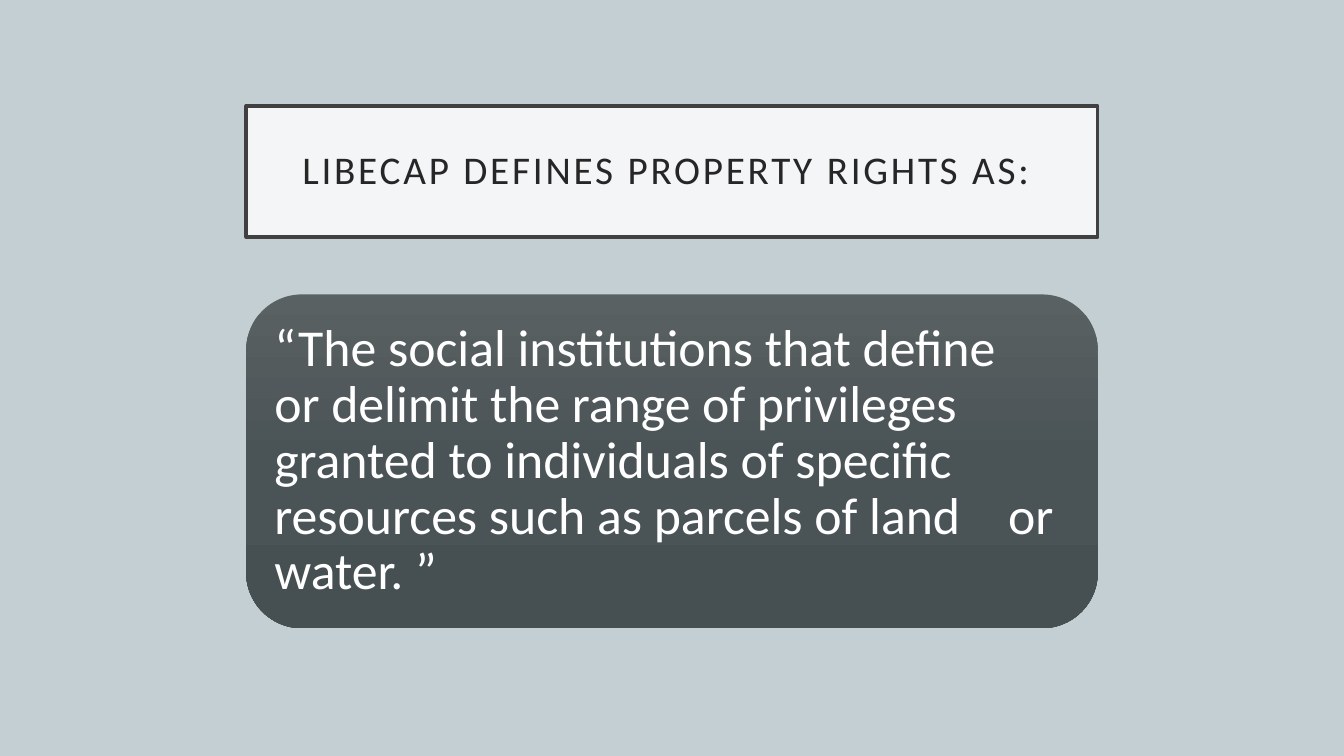
"""Build the slide that quotes Libecap's definition of property rights."""
from lxml import etree
from pptx import Presentation
from pptx.dml.color import RGBColor
from pptx.enum.shapes import MSO_SHAPE as Shape
from pptx.enum.text import MSO_ANCHOR as Anchor, PP_ALIGN as Align
from pptx.oxml.ns import qn
from pptx.util import Cm, Pt

COLORS = {
    "background": "C3CFD3",
    "heading_fill": "FFFFFF",
    "heading_line": "404040",
    "heading_text": "262626",
    "quote_top": "5A6163",
    "quote_middle": "4A5356",
    "quote_bottom": "465053",
    "quote_text": "FFFFFF",
}
SLIDE_WIDTH, SLIDE_HEIGHT = 33.87, 19.05
COLUMN_WIDTH = 21.46
COLUMN_LEFT = (SLIDE_WIDTH - COLUMN_WIDTH) / 2
HEADING = "LIBECAP DEFINES PROPERTY RIGHTS AS: "
QUOTE = (
    "“The social institutions that define\vor delimit the range of privileges "
    "granted to individuals of specific resources such as parcels of land\tor water. ”"
)


def rgb(name):
    """Return the named colour."""
    return RGBColor.from_string(COLORS[name])


def add_panel(slide, box, preset):
    """Add a shape without shadow in the given box."""
    panel = slide.shapes.add_shape(preset, *(Cm(length) for length in box))
    panel.shadow.inherit = False
    return panel


def write_text(panel, text, *, size, color, inset, align=Align.LEFT, tracking=0, tab=None):
    """Write one vertically centred paragraph into a panel."""
    frame = panel.text_frame
    frame.word_wrap = True
    frame.vertical_anchor = Anchor.MIDDLE
    frame.margin_left = frame.margin_right = Cm(inset)
    frame.margin_top = frame.margin_bottom = Cm(inset)
    paragraph = frame.paragraphs[0]
    paragraph.text = text
    paragraph.alignment = align
    paragraph.line_spacing = 0.9
    if tab:
        stops = etree.SubElement(paragraph._p.get_or_add_pPr(), qn("a:tabLst"))
        etree.SubElement(stops, qn("a:tab"), pos=str(Cm(tab)), algn="l")
    for run in paragraph.runs:
        run.font.name = "Calibri"
        run.font.size = Pt(size)
        run.font.color.rgb = rgb(color)
        if tracking:
            run._r.get_or_add_rPr().set("spc", str(tracking * 100))


def fill_gradient(panel, names):
    """Fill a panel from top to bottom with evenly spaced colours."""
    panel.fill.gradient()
    gradient = panel._element.spPr.find(qn("a:gradFill"))
    for child in list(gradient):
        gradient.remove(child)
    stops = etree.SubElement(gradient, qn("a:gsLst"))
    for index, name in enumerate(names):
        position = 100000 * index // (len(names) - 1)
        stop = etree.SubElement(stops, qn("a:gs"), pos=str(position))
        etree.SubElement(stop, qn("a:srgbClr"), val=COLORS[name])
    etree.SubElement(gradient, qn("a:lin"), ang="5400000", scaled="0")


def add_heading(slide, box):
    """Add the framed, translucent heading."""
    heading = add_panel(slide, box, Shape.RECTANGLE)
    heading.fill.solid()
    heading.fill.fore_color.rgb = rgb("heading_fill")
    fill_color = heading._element.spPr.find(qn("a:solidFill"))[0]
    etree.SubElement(fill_color, qn("a:alpha"), val="80000")
    heading.line.color.rgb = rgb("heading_line")
    heading.line.width = Pt(2.5)
    write_text(heading, HEADING, size=28, color="heading_text", inset=0.51,
               align=Align.CENTER, tracking=2)


def add_quote(slide, box):
    """Add the rounded panel with the quotation."""
    quote = add_panel(slide, box, Shape.ROUNDED_RECTANGLE)
    fill_gradient(quote, ["quote_top", "quote_middle", "quote_bottom"])
    quote.line.fill.background()
    write_text(quote, QUOTE, size=37, color="quote_text", inset=0.3, tab=18.49)


def main():
    """Build and save the presentation."""
    deck = Presentation()
    deck.slide_width, deck.slide_height = Cm(SLIDE_WIDTH), Cm(SLIDE_HEIGHT)
    slide = deck.slides.add_slide(deck.slide_layouts[6])
    slide.background.fill.solid()
    slide.background.fill.fore_color.rgb = rgb("background")
    add_heading(slide, (COLUMN_LEFT, 2.67, COLUMN_WIDTH, 3.3))
    add_quote(slide, (COLUMN_LEFT, 7.42, COLUMN_WIDTH, 8.41))
    deck.save("out.pptx")


if __name__ == "__main__":
    main()
